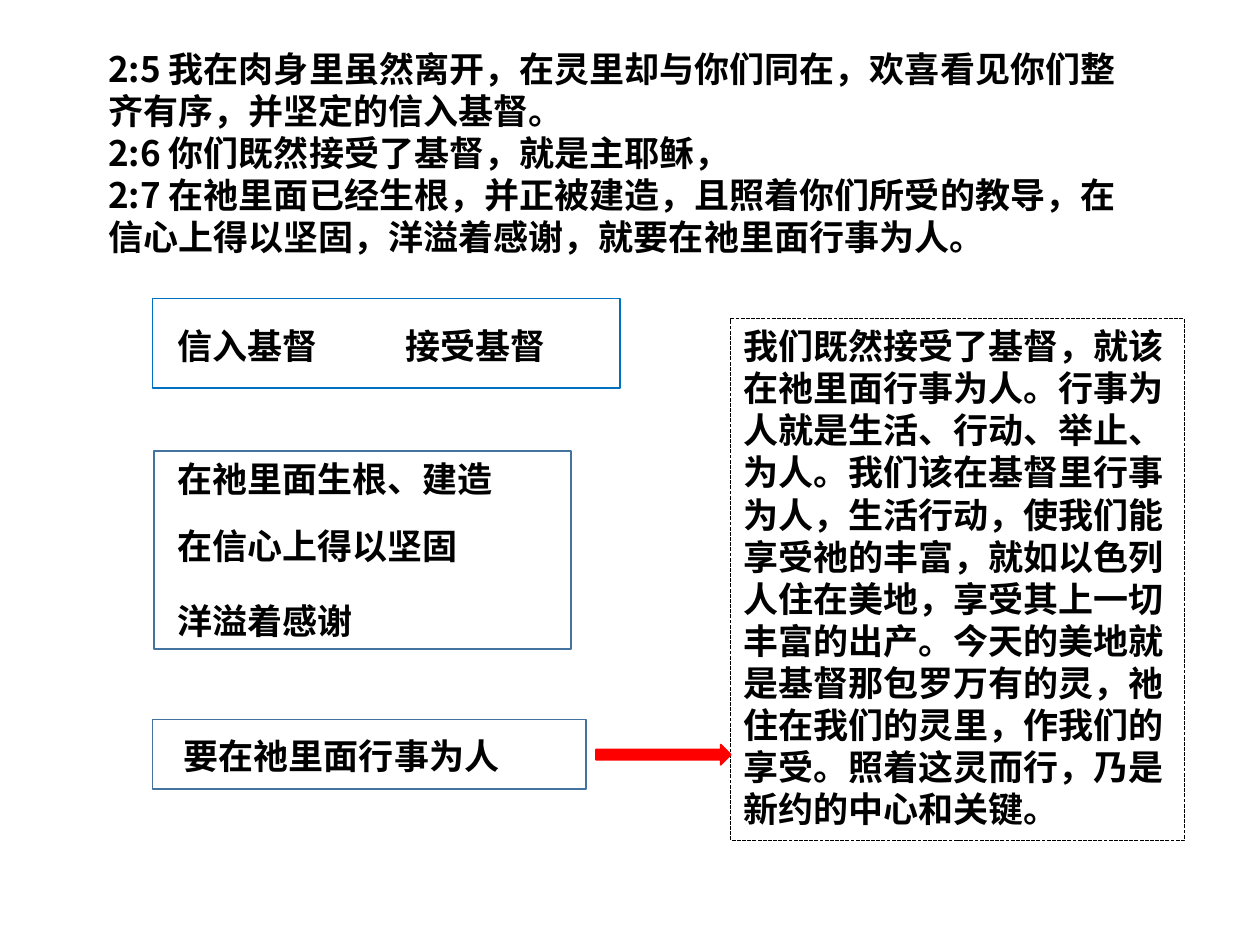
from dataclasses import dataclass

from lxml import etree
from pptx import Presentation
from pptx.dml.color import RGBColor
from pptx.enum.dml import MSO_LINE
from pptx.enum.shapes import MSO_SHAPE
from pptx.enum.text import MSO_ANCHOR, PP_ALIGN
from pptx.oxml.ns import qn
from pptx.util import Inches, Pt

RECTANGLE = MSO_SHAPE.RECTANGLE
RIGHT_ARROW = MSO_SHAPE.RIGHT_ARROW
SYS_DASH = MSO_LINE.SQUARE_DOT
LEFT = PP_ALIGN.LEFT
TOP = MSO_ANCHOR.TOP


@dataclass(frozen=True)
class Theme:
    ink: RGBColor = RGBColor(0x00, 0x00, 0x00)
    bright_blue: RGBColor = RGBColor(0x00, 0x70, 0xC0)
    steel_blue: RGBColor = RGBColor(0x43, 0x73, 0x9E)
    red: RGBColor = RGBColor(0xFF, 0x00, 0x00)
    latin: str = "Calibri"
    chinese: str = "Noto Sans CJK SC"
    size: int = 20


THEME = Theme()

VERSES = [
    "2:5 我在肉身里虽然离开，在灵里却与你们同在，欢喜看见你们整齐有序，并坚定的信入基督。",
    "2:6 你们既然接受了基督，就是主耶稣，",
    "2:7 在祂里面已经生根，并正被建造，且照着你们所受的教导，在信心上得以坚固，洋溢着感谢，就要在祂里面行事为人。",
]
EXPLANATION = (
    "我们既然接受了基督，就该在祂里面行事为人。行事为人就是生活、行动、举止、为人。"
    "我们该在基督里行事为人，生活行动，使我们能享受祂的丰富，就如以色列人住在美地，"
    "享受其上一切丰富的出产。今天的美地就是基督那包罗万有的灵，祂住在我们的灵里，"
    "作我们的享受。照着这灵而行，乃是新约的中心和关键。"
)


def write(frame, paragraphs, font=THEME.latin, wrap=True):
    frame.word_wrap = wrap
    frame.vertical_anchor = TOP
    for index, words in enumerate(paragraphs):
        paragraph = frame.paragraphs[0] if index == 0 else frame.add_paragraph()
        paragraph.alignment = LEFT
        run = paragraph.add_run()
        run.text = words
        run.font.name = font
        run.font.size = Pt(THEME.size)
        run.font.bold = True
        run.font.color.rgb = THEME.ink
        east_asian = etree.SubElement(run.font._element, qn("a:ea"))
        east_asian.set("typeface", THEME.chinese)


def add_outline(slide, box, color, kind=RECTANGLE, width=1, fill=None):
    outline = slide.shapes.add_shape(kind, *map(Inches, box))
    outline.shadow.inherit = False
    outline.line.color.rgb = color
    outline.line.width = Pt(width)
    if fill is None:
        outline.fill.background()
    else:
        outline.fill.solid()
        outline.fill.fore_color.rgb = fill
    return outline


def add_passage(slide, box):
    passage = slide.shapes.add_textbox(*map(Inches, box))
    write(passage.text_frame, VERSES, font=THEME.chinese)


def add_phrase_group(slide, box, color, phrases):
    left, top = box[:2]
    add_outline(slide, box, color)
    for words, across, down in phrases:
        width = 0.2 + 0.28 * len(words)
        phrase = slide.shapes.add_textbox(
            Inches(left + across), Inches(top + down), Inches(width), Inches(0.44)
        )
        write(phrase.text_frame, [words], wrap=False)


def add_explanation(slide, box):
    explanation = add_outline(slide, box, THEME.ink, width=0.75)
    explanation.line.dash_style = SYS_DASH
    write(explanation.text_frame, [EXPLANATION], font=THEME.chinese)


def main():
    presentation = Presentation()
    presentation.slide_width = Inches(10)
    presentation.slide_height = Inches(7.5)
    slide = presentation.slides.add_slide(presentation.slide_layouts[6])

    add_passage(slide, (0.76, 0.33, 8.44, 1.78))
    add_phrase_group(
        slide, (1.21, 2.37, 3.71, 0.71), THEME.bright_blue,
        [("信入基督", 0.1, 0.16), ("接受基督", 1.91, 0.16)],
    )
    add_phrase_group(
        slide, (1.22, 3.58, 3.31, 1.57), THEME.steel_blue,
        [("在祂里面生根、建造", 0.09, 0), ("在信心上得以坚固", 0.09, 0.53),
         ("洋溢着感谢", 0.09, 1.13)],
    )
    add_phrase_group(
        slide, (1.21, 5.71, 3.44, 0.55), THEME.steel_blue,
        [("要在祂里面行事为人", 0.15, 0.07)],
    )
    add_explanation(slide, (5.8, 2.53, 3.6, 4.14))
    add_outline(slide, (4.73, 5.91, 1.07, 0.16), THEME.red,
                kind=RIGHT_ARROW, fill=THEME.red)

    presentation.save("out.pptx")


if __name__ == "__main__":
    main()
